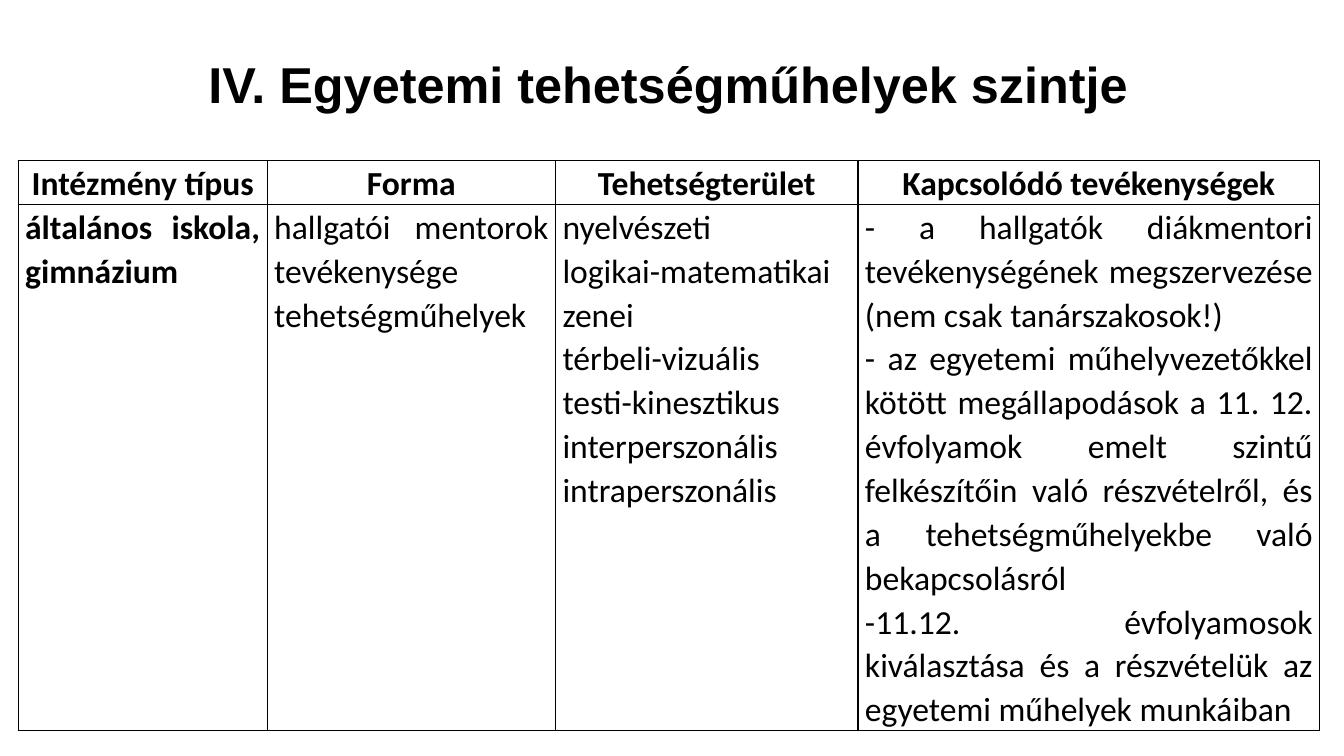
import pptx
import pptx.dml.color
import pptx.enum.text
import pptx.oxml
import pptx.oxml.ns
import pptx.util
from pptx.util import Inches

ALIGN = pptx.enum.text.PP_ALIGN
WIDTH, HEIGHT = 13.33, 7.5
BLACK = "000000"
COLUMN_WIDTHS = [2.47, 2.86, 3, 4.58]
ROW_HEIGHTS = [0.44, 5.22]
HEADINGS = ["Intézmény típus", "Forma", "Tehetségterület", "Kapcsolódó tevékenységek"]
WORKSHOPS = [
    ["általános iskola, gimnázium"],
    ["hallgatói mentorok tevékenysége", "tehetségműhelyek"],
    ["nyelvészeti", "logikai-matematikai", "zenei", "térbeli-vizuális",
     "testi-kinesztikus", "interperszonális", "intraperszonális"],
    ["- a hallgatók diákmentori tevékenységének megszervezése (nem csak tanárszakosok!)",
     "- az egyetemi műhelyvezetőkkel kötött megállapodások a 11. 12. évfolyamok emelt "
     "szintű felkészítőin való részvételről, és a tehetségműhelyekbe való bekapcsolásról",
     "-11.12. évfolyamosok kiválasztása és a részvételük az egyetemi műhelyek munkáiban"],
]


def color(hex_value):
    """Turn a hex string into a colour."""
    return pptx.dml.color.RGBColor.from_string(hex_value)


def write(frame, lines, font, size, bold, align, spacing):
    """Fill a text frame with one paragraph per line."""
    frame.text = "\n".join(lines)
    for paragraph in frame.paragraphs:
        paragraph.alignment = align
        paragraph.line_spacing = spacing
        paragraph.font.name = font
        paragraph.font.size = pptx.util.Pt(size)
        paragraph.font.bold = bold
        paragraph.font.color.rgb = color(BLACK)


def draw_borders(cell, hex_value, points):
    """Draw a solid line on all four sides of a cell."""
    properties = cell._tc.get_or_add_tcPr()
    for position, side in enumerate(["lnL", "lnR", "lnT", "lnB"]):
        properties.insert(position, pptx.oxml.parse_xml(
            f'<a:{side} {pptx.oxml.ns.nsdecls("a")} w="{pptx.util.Pt(points)}">'
            f'<a:solidFill><a:srgbClr val="{hex_value}"/></a:solidFill></a:{side}>'))


def add_title(slide, left, top, width, height):
    """Place the centred slide title in its box."""
    frame = slide.shapes.add_textbox(
        Inches(left), Inches(top), Inches(width), Inches(height)).text_frame
    frame.word_wrap = True
    frame.vertical_anchor = pptx.enum.text.MSO_ANCHOR.MIDDLE
    write(frame, ["IV. Egyetemi tehetségműhelyek szintje"], "Arial", 36, True,
          ALIGN.CENTER, 0.9)


def add_workshop_table(slide, left, top):
    """Place the table of workshops with its top left corner at the given point."""
    table = slide.shapes.add_table(
        len(ROW_HEIGHTS), len(COLUMN_WIDTHS), Inches(left), Inches(top),
        Inches(sum(COLUMN_WIDTHS)), Inches(sum(ROW_HEIGHTS))).table
    table.first_row = table.horz_banding = False
    for column, width in zip(table.columns, COLUMN_WIDTHS):
        column.width = Inches(width)
    for row, height in zip(table.rows, ROW_HEIGHTS):
        row.height = Inches(height)
    contents = [[[heading] for heading in HEADINGS], WORKSHOPS]
    for row_index, row_texts in enumerate(contents):
        for column_index, lines in enumerate(row_texts):
            cell = table.cell(row_index, column_index)
            cell.margin_left = cell.margin_right = Inches(0.07)
            cell.margin_top = cell.margin_bottom = 0
            cell.fill.background()
            draw_borders(cell, BLACK, 1)
            heading = row_index == 0
            write(cell.text_frame, lines, "Calibri", 24, heading or column_index == 0,
                  ALIGN.CENTER if heading else ALIGN.JUSTIFY, 1.07)


def main():
    """Build the slide and save it."""
    deck = pptx.Presentation()
    deck.slide_width, deck.slide_height = Inches(WIDTH), Inches(HEIGHT)
    slide = deck.slides.add_slide(deck.slide_layouts[6])
    add_title(slide, 0.88, 0.49, 11.5, 0.76)
    add_workshop_table(slide, 0.18, 1.59)
    deck.save("out.pptx")


if __name__ == "__main__":
    main()
